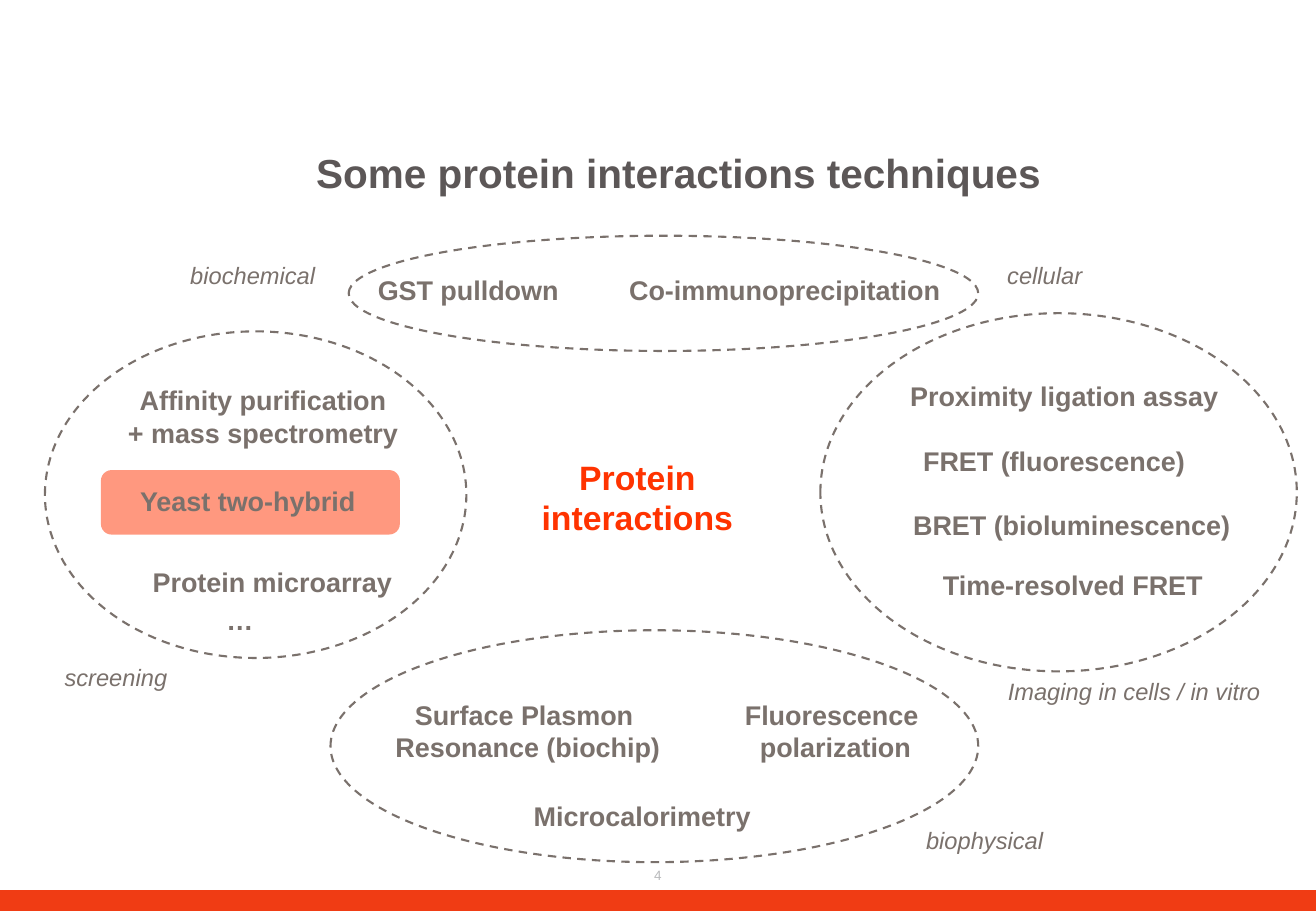
import pptx
import pptx.util
import pptx.dml.color
import pptx.enum.dml
import pptx.enum.shapes
import pptx.enum.text
import pptx.oxml
import pptx.oxml.ns

Cm = pptx.util.Cm
Pt = pptx.util.Pt
Kind = pptx.enum.shapes.MSO_SHAPE
Anchor = pptx.enum.text.MSO_ANCHOR

HUES = {"bar": "F03C14", "core": "FF3300", "text": "7A716C",
        "title": "5C5757", "page": "B8B9BB"}

# Text formats: font values and the key of the colour
STYLES = {
    "title": ({"size": Pt(24), "bold": True}, "title"),
    "core": ({"size": Pt(20), "bold": True}, "core"),
    "method": ({"size": Pt(16), "bold": True}, "text"),
    "label": ({"size": Pt(14), "italic": True}, "text"),
    "page": ({"size": Pt(8)}, "page"),
}


class Maker:
    def __init__(self, deck):
        self.slide = deck.slides.add_slide(deck.slide_layouts[5])
        self.shapes = self.slide.shapes
        self.font = "Arial"

    def hue(self, name):
        return pptx.dml.color.RGBColor.from_string(HUES[name])

    def fill_in(self, frame, text, style):
        values, hue = STYLES[style]
        frame.text = text
        for para in frame.paragraphs:
            para.alignment = pptx.enum.text.PP_ALIGN.CENTER
            font = para.runs[0].font
            for key, value in {"name": self.font, **values}.items():
                setattr(font, key, value)
            font.color.rgb = self.hue(hue)

    def title(self, text, *box):
        shape = self.shapes.title
        for key, value in zip(("left", "top", "width", "height"), box):
            setattr(shape, key, Cm(value))
        frame = shape.text_frame
        frame.vertical_anchor = Anchor.MIDDLE
        self.fill_in(frame, text, "title")

    def text(self, text, style, *box, wrap=False, anchor=Anchor.TOP):
        frame = self.shapes.add_textbox(*map(Cm, box)).text_frame
        frame.word_wrap = wrap
        frame.vertical_anchor = anchor
        self.fill_in(frame, text, style)

    def block(self, kind, hue, *box, alpha=None):
        shape = self.shapes.add_shape(kind, *map(Cm, box))
        shape.shadow.inherit = False
        shape.fill.solid()
        shape.fill.fore_color.rgb = self.hue(hue)
        shape.line.fill.background()
        if alpha:
            tone = shape.element.spPr.find(".//" + pptx.oxml.ns.qn("a:srgbClr"))
            tone.append(pptx.oxml.parse_xml(
                f'<a:alpha {pptx.oxml.ns.nsdecls("a")} val="{alpha * 1000}"/>'))
        return shape

    def ring(self, *box):
        shape = self.shapes.add_shape(Kind.OVAL, *map(Cm, box))
        shape.shadow.inherit = False
        shape.fill.background()
        shape.line.color.rgb = self.hue("text")
        shape.line.width = Pt(1.25)
        shape.line.dash_style = pptx.enum.dml.MSO_LINE.DASH


def main():
    deck = pptx.Presentation()
    deck.slide_width, deck.slide_height = Cm(27.51), Cm(19.05)
    page = Maker(deck)

    # Footer bar and highlight
    bar = page.block(Kind.RECTANGLE, "bar", 0, 18.64, 27.51, 0.41)
    bar.line.color.rgb = page.hue("bar")
    bar.line.width = Pt(2)
    page.block(Kind.ROUNDED_RECTANGLE, "core", 2.11, 9.83, 6.25, 1.35, alpha=50)

    # Title, centre and page number
    page.title("Some protein interactions techniques", 2.64, 2.11, 23.09, 2.97)
    page.text("Protein interactions", "core", 10.19, 9.42, 6.27, 1.96, wrap=True)
    page.text("4", "page", 3.38, 17.93, 20.75, 0.76, anchor=Anchor.MIDDLE)

    # Methods: left, top, width
    methods = [
        ("GST pulldown", 7.62, 5.59, 4.34),
        ("Co-immunoprecipitation", 12.85, 5.59, 7.11),
        ("Affinity purification\n+ mass spectrometry", 2.39, 7.9, 6.22),
        ("Yeast two-hybrid", 2.64, 10.01, 5.08),
        ("Protein microarray", 2.9, 11.71, 5.59),
        ("…", 4.47, 12.5, 1.09),
        ("Proximity ligation assay", 18.06, 7.82, 8.38),
        ("FRET (fluorescence)", 18.21, 9.17, 7.65),
        ("BRET (bioluminescence)", 18.8, 10.52, 7.21),
        ("Time-resolved FRET", 19.18, 11.76, 6.5),
        ("Surface Plasmon \nResonance (biochip)", 7.44, 14.48, 7.19),
        ("Fluorescence \npolarization", 14.71, 14.48, 5.51),
        ("Microcalorimetry", 10.87, 16.59, 5.11),
    ]
    for text, left, top, width in methods:
        high = 1.63 if "\n" in text else 0.94
        page.text(text, "method", left, top, width, high)

    # Dashed group outlines
    for box in [(0.94, 6.93, 8.81, 6.83), (6.91, 13.18, 13.54, 4.85),
                (17.15, 6.55, 9.96, 7.49), (7.29, 4.93, 13.16, 2.41)]:
        page.ring(*box)

    # Group labels
    labels = [
        ("biochemical", 3.71, 5.33, 3.15),
        ("cellular", 20.8, 5.33, 2.08),
        ("screening", 1.09, 13.74, 2.67),
        ("Imaging in cells / in vitro", 20.8, 14.02, 5.82),
        ("biophysical", 19.1, 17.15, 2.97),
    ]
    for text, left, top, width in labels:
        page.text(text, "label", left, top, width, 0.86)

    deck.save("out.pptx")


if __name__ == "__main__":
    main()
